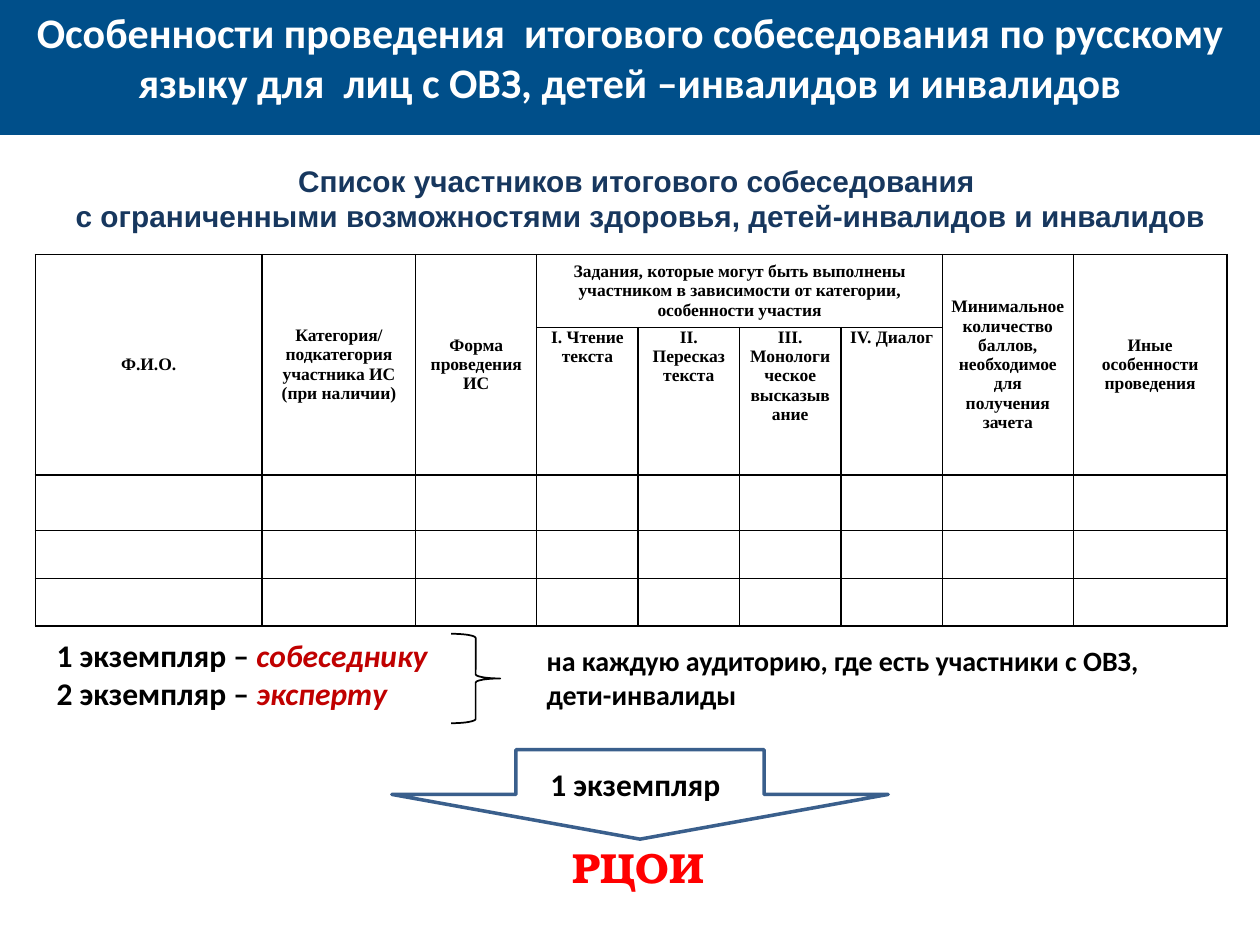
from lxml import etree
from pptx import Presentation
from pptx.dml.color import RGBColor
from pptx.enum.shapes import MSO_SHAPE
from pptx.enum.text import MSO_ANCHOR, MSO_AUTO_SIZE, PP_ALIGN
from pptx.oxml.ns import qn
from pptx.util import Inches, Pt

LEFT, CENTER = PP_ALIGN.LEFT, PP_ALIGN.CENTER
TOP, MIDDLE = MSO_ANCHOR.TOP, MSO_ANCHOR.MIDDLE
NO_AUTOFIT = MSO_AUTO_SIZE.NONE
BRACE, ARROW = MSO_SHAPE.RIGHT_BRACE, MSO_SHAPE.DOWN_ARROW

WIDTH, HEIGHT = 10, 7.5
TITLE_ONLY = 5
UNIT = 0.1  # grid of 100 columns by 75 rows
BLACK, WHITE, RED = "000000", "FFFFFF", "FF0000"
BAND_BLUE, HEADING_BLUE, ARROW_BLUE = "004F8A", "17375E", "3A5F8C"
ACCENT = "C00000"


def color(value):
    return RGBColor.from_string(value)


def grid(*lengths):
    return [Inches(length * UNIT) for length in lengths]


class SlideBuilder:
    """Holds the slide, its text style and the shapes being filled."""

    font, size, ink = "Calibri", 18, BLACK

    def __init__(self, presentation):
        self.slide = presentation.slides.add_slide(presentation.slide_layouts[TITLE_ONLY])
        self.shapes = self.slide.shapes

    def start_group(self):
        self.shapes = self.slide.shapes.add_group_shape().shapes

    def end_group(self):
        self.shapes = self.slide.shapes

    def add_runs(self, frame, paragraphs, align=LEFT, font=None, size=None, ink=None):
        """Each paragraph is a list of runs: (text, accented)."""
        for index, runs in enumerate(paragraphs):
            paragraph = frame.add_paragraph() if index else frame.paragraphs[0]
            paragraph.alignment = align
            for text, accented in runs:
                run = paragraph.add_run()
                run.text = text
                run.font.name = font or self.font
                run.font.size = Pt(size or self.size)
                run.font.bold = True
                run.font.italic = accented
                run.font.color.rgb = color(ACCENT if accented else ink or self.ink)

    def title(self, text, place, fill):
        shape = self.slide.shapes.title
        shape.left, shape.top, shape.width, shape.height = grid(*place)
        shape.fill.solid()
        shape.fill.fore_color.rgb = color(fill)
        frame = shape.text_frame
        frame.auto_size = NO_AUTOFIT
        frame.vertical_anchor = TOP
        self.add_runs(frame, [[(text, False)]], CENTER, size=24, ink=WHITE)

    def text(self, paragraphs, place, **style):
        frame = self.shapes.add_textbox(*grid(*place)).text_frame
        frame.word_wrap = True
        frame.auto_size = NO_AUTOFIT
        self.add_runs(frame, paragraphs, **style)

    def outline(self, preset, place, line, weight):
        shape = self.shapes.add_shape(preset, *grid(*place))
        shape.shadow.inherit = False
        shape.fill.background()
        shape.line.color.rgb = color(line)
        shape.line.width = Pt(weight)

    def table(self, place, columns, rows, headers):
        """Headers are (row, column, row span, column span, text)."""
        frame = self.shapes.add_table(
            len(rows), len(columns), *grid(*place, sum(columns), sum(rows)))
        table = frame.table
        table.first_row = table.horz_banding = False
        for column, width in zip(table.columns, grid(*columns)):
            column.width = width
        for row, height in zip(table.rows, grid(*rows)):
            row.height = height
        for cell in table.iter_cells():
            cell.margin_left = cell.margin_right = Inches(0.06)
            cell.margin_top = cell.margin_bottom = 0
            cell.fill.background()
            self.border(cell)
        for row, column, row_span, column_span, text in headers:
            cell = table.cell(row, column)
            if row_span * column_span > 1:
                cell.merge(table.cell(row + row_span - 1, column + column_span - 1))
            cell.vertical_anchor = TOP if row else MIDDLE
            self.add_runs(cell.text_frame, [[(text, False)]], CENTER, "Times New Roman", 10)

    def border(self, cell):
        properties = cell._tc.get_or_add_tcPr()
        for index, side in enumerate(("lnL", "lnR", "lnT", "lnB")):
            line = etree.Element(qn("a:" + side), w=str(Pt(1)))
            fill = etree.SubElement(line, qn("a:solidFill"))
            etree.SubElement(fill, qn("a:srgbClr"), val=BLACK)
            properties.insert(index, line)


def main():
    presentation = Presentation()
    presentation.slide_width, presentation.slide_height = Inches(WIDTH), Inches(HEIGHT)
    builder = SlideBuilder(presentation)

    # Title band and heading
    builder.title(
        "Особенности проведения  итогового собеседования по русскому языку "
        "для  лиц с ОВЗ, детей –инвалидов и инвалидов",
        (0, 0, 100, 10.7), BAND_BLUE)
    builder.text(
        [[("Список участников итогового собеседования ", False)],
         [("с ограниченными возможностями здоровья, детей-инвалидов и инвалидов", False)]],
        (2.8, 12.4, 96.1, 9.8), align=CENTER, font="Arial", size=17, ink=HEADING_BLUE)

    # Copies for each room
    builder.start_group()
    builder.text(
        [[(f"{number} экземпляр – ", False), (person, True)]
         for number, person in enumerate(("собеседнику", "эксперту"), 1)],
        (3.5, 50, 55.1, 7.1))
    builder.outline(BRACE, (35.8, 50.3, 3.9, 7.1), BLACK, 1)
    builder.text(
        [[("на каждую аудиторию, где есть участники с ОВЗ, дети-инвалиды", False)]],
        (42.4, 50.6, 54.4, 6.4), size=16)
    builder.end_group()

    # List of participants
    tall_headers = {
        0: "Ф.И.О.",
        1: "Категория/ подкатегория участника ИС (при наличии)",
        2: "Форма проведения ИС",
        7: "Минимальное количество баллов, необходимое для получения зачета",
        8: "Иные особенности проведения",
    }
    tasks = ("I. Чтение текста", "II. Пересказ текста",
             "III. Монологическое высказывание", "IV. Диалог")
    headers = [(0, column, 2, 1, text) for column, text in tall_headers.items()]
    headers.append((0, 3, 1, len(tasks),
                    "Задания, которые могут быть выполнены участником "
                    "в зависимости от категории, особенности участия"))
    headers += [(1, column, 1, 1, text) for column, text in enumerate(tasks, 3)]
    builder.table(
        (2.8, 20.2),
        [18, 12.2, 9.6] + [8.05] * len(tasks) + [10.4, 12.2],
        [5.8, 11.7, 4.4, 3.8, 3.8],
        headers)

    # Copy for the processing centre
    builder.start_group()
    builder.outline(ARROW, (31.1, 59.5, 39.4, 7.1), ARROW_BLUE, 2)
    builder.text([[("1 экземпляр", False)]], (42.7, 60.2, 16.3, 4))
    builder.end_group()
    builder.text([[("РЦОИ", False)]], (42.4, 66.3, 16.5, 5),
                 align=CENTER, font="TeX Gyre Bonum", size=24, ink=RED)

    presentation.save("out.pptx")


if __name__ == "__main__":
    main()
